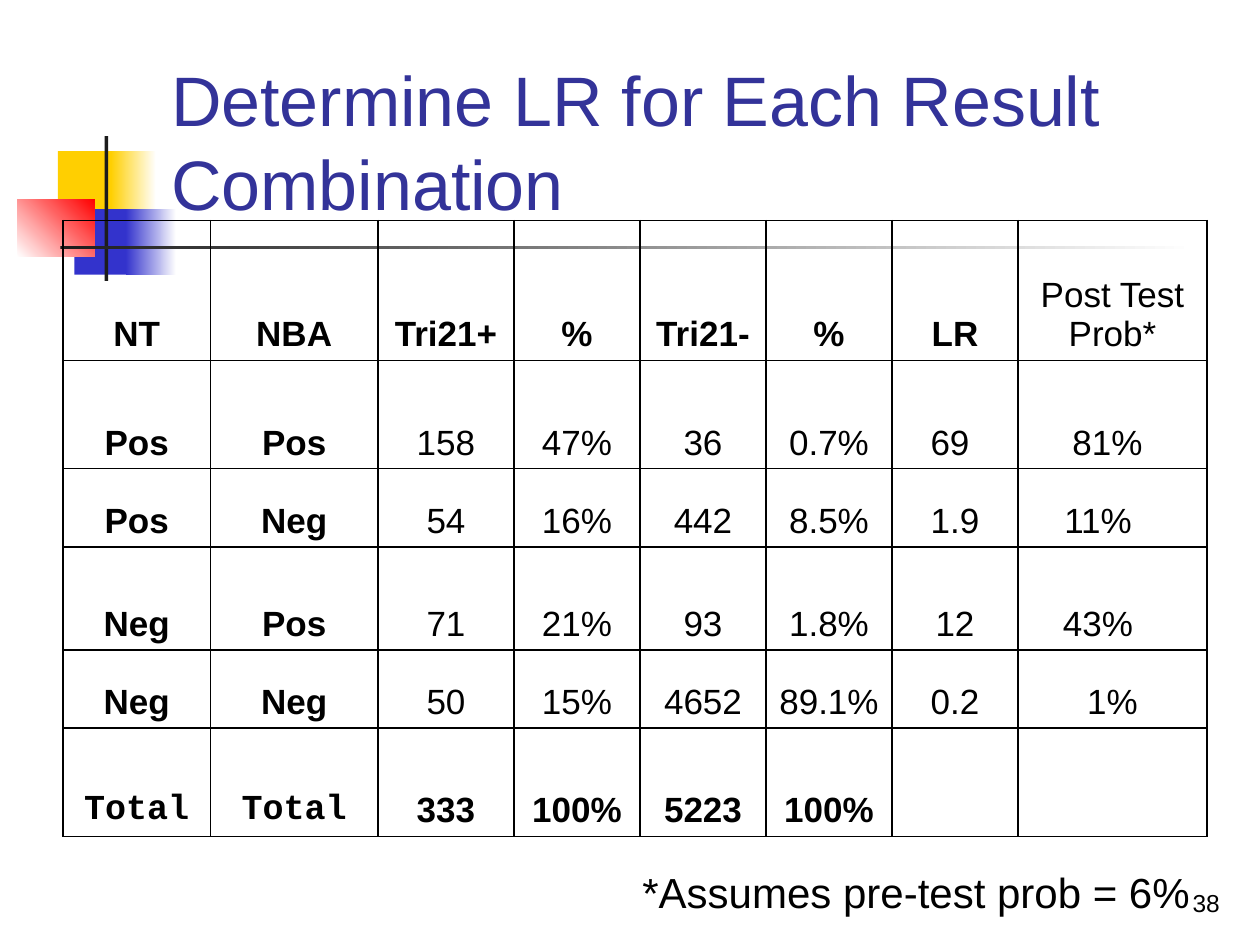
from dataclasses import dataclass
from typing import Optional

from lxml import etree
from pptx import Presentation
from pptx.dml.color import RGBColor
from pptx.enum.shapes import MSO_SHAPE
from pptx.enum.text import MSO_ANCHOR, PP_ALIGN
from pptx.oxml.ns import qn
from pptx.util import Inches, Pt

RECT = MSO_SHAPE.RECTANGLE
TOP, BOTTOM = MSO_ANCHOR.TOP, MSO_ANCHOR.BOTTOM
LEFT, CENTER, RIGHT = PP_ALIGN.LEFT, PP_ALIGN.CENTER, PP_ALIGN.RIGHT


@dataclass(frozen=True)
class Theme:
    sans: str = "Arial"
    mono: str = "Courier New"
    gold: str = "FFCF01"
    blue: str = "3333CC"
    red: str = "FF0000"
    dark: str = "1C1C1C"
    white: str = "FFFFFF"
    black: str = "000000"
    title: str = "333399"
    head_size: int = 40
    note_size: int = 24
    cell_size: int = 20
    page_size: int = 14
    rule: float = 1


@dataclass(frozen=True)
class Block:
    """A rectangle; with an end colour it is filled with a gradient."""
    left: float
    top: float
    width: float
    height: float
    color: str
    end: Optional[str] = None
    angle: float = 0


@dataclass(frozen=True)
class Label:
    text: str
    left: float
    top: float
    width: float
    height: float
    size: int
    color: str
    anchor: MSO_ANCHOR = TOP
    align: PP_ALIGN = LEFT
    wrap: bool = True


T = Theme()

BLOCKS = [
    Block(0.46, 1.2, 0.48, 0.52, T.gold),
    Block(0.88, 1.2, 0.36, 0.52, T.gold, T.white),
    Block(0.59, 1.66, 0.46, 0.52, T.blue),
    Block(1, 1.66, 0.4, 0.52, T.blue, T.white),
    Block(0.14, 1.58, 0.61, 0.46, T.white, T.red, 45),
    Block(0.83, 1.08, 0.03, 1.15, T.dark),
    Block(0.48, 1.95, 9, 0.03, T.dark, T.white),
]

LABELS = [
    Label("Determine LR for Each Result Combination", 1.26, 0.23, 8.52, 1.6,
          T.head_size, T.title, BOTTOM),
    Label("*Assumes pre-test prob = 6%", 5, 6.83, 4.55, 0.5,
          T.note_size, T.black, wrap=False),
    Label("38", 7.7, 6.83, 2.08, 0.5, T.page_size, T.black, BOTTOM, RIGHT),
]

ROWS = [
    ["NT", "NBA", "Tri21+", "%", "Tri21-", "%", "LR", "Post Test Prob*"],
    ["Pos", "Pos", "158", "47%", "36", "0.7%", "69", "81%"],
    ["Pos", "Neg", "54", "16%", "442", "8.5%", "1.9", "11%"],
    ["Neg", "Pos", "71", "21%", "93", "1.8%", "12", "43%"],
    ["Neg", "Neg", "50", "15%", "4652", "89.1%", "0.2", "1%"],
    ["Total", "Total", "333", "100%", "5223", "100%", "", ""],
]
WIDTHS = [1.17, 1.33, 1.08, 1, 1, 1, 1, 1.5]
HEIGHTS = [1.11, 0.86, 0.62, 0.82, 0.62, 0.86]
# Extra right margin of cells set a little left of centre
NUDGES = {(1, 6): 0.08, (1, 7): 0.08, (2, 7): 0.23, (3, 7): 0.23}


def style(par, size: int, color: str, align: PP_ALIGN,
          face: str = T.sans, bold: bool = False) -> None:
    par.alignment = align
    font = par.font
    font.name, font.size, font.bold = face, Pt(size), bold
    font.color.rgb = RGBColor.from_string(color)


def draw_block(slide, block: Block) -> None:
    shape = slide.shapes.add_shape(
        RECT, Inches(block.left), Inches(block.top),
        Inches(block.width), Inches(block.height))
    shape.shadow.inherit = False
    shape.line.fill.background()
    if block.end is None:
        shape.fill.solid()
        shape.fill.fore_color.rgb = RGBColor.from_string(block.color)
        return
    shape.fill.gradient()
    shape.fill.gradient_angle = block.angle
    for stop, color in zip(shape.fill.gradient_stops, (block.color, block.end)):
        stop.color.rgb = RGBColor.from_string(color)


def draw_label(slide, label: Label) -> None:
    box = slide.shapes.add_textbox(
        Inches(label.left), Inches(label.top),
        Inches(label.width), Inches(label.height))
    frame = box.text_frame
    frame.word_wrap = label.wrap
    frame.vertical_anchor = label.anchor
    frame.text = label.text
    style(frame.paragraphs[0], label.size, label.color, label.align)


def add_rules(cell) -> None:
    props = cell._tc.get_or_add_tcPr()
    for spot, side in enumerate(("a:lnL", "a:lnR", "a:lnT", "a:lnB")):
        line = etree.Element(qn(side), w=str(Pt(T.rule)))
        fill = etree.SubElement(line, qn("a:solidFill"))
        etree.SubElement(fill, qn("a:srgbClr"), val=T.black)
        props.insert(spot, line)


def draw_table(slide, left: float, top: float) -> None:
    table = slide.shapes.add_table(
        len(ROWS), len(WIDTHS), Inches(left), Inches(top),
        Inches(sum(WIDTHS)), Inches(sum(HEIGHTS))).table
    table.first_row = table.horz_banding = False
    for col, width in zip(table.columns, WIDTHS):
        col.width = Inches(width)
    for row, height in zip(table.rows, HEIGHTS):
        row.height = Inches(height)
    last = len(ROWS) - 1
    for r, texts in enumerate(ROWS):
        for c, text in enumerate(texts):
            cell = table.cell(r, c)
            cell.fill.background()
            add_rules(cell)
            cell.vertical_anchor = BOTTOM
            cell.margin_right = Inches(0.1 + NUDGES.get((r, c), 0))
            cell.text = text
            bold = c < 2 or (r in (0, last) and c < 7)
            face = T.mono if r == last and c < 2 else T.sans
            style(cell.text_frame.paragraphs[0], T.cell_size, T.black,
                  CENTER, face, bold)


def main() -> None:
    deck = Presentation()
    deck.slide_width, deck.slide_height = Inches(10), Inches(7.5)
    slide = deck.slides.add_slide(deck.slide_layouts[6])

    # Corner ornament and rule
    for block in BLOCKS:
        draw_block(slide, block)
    # Results, then title, footnote and page number
    draw_table(slide, 0.5, 1.75)
    for label in LABELS:
        draw_label(slide, label)
    deck.save("out.pptx")


if __name__ == "__main__":
    main()
